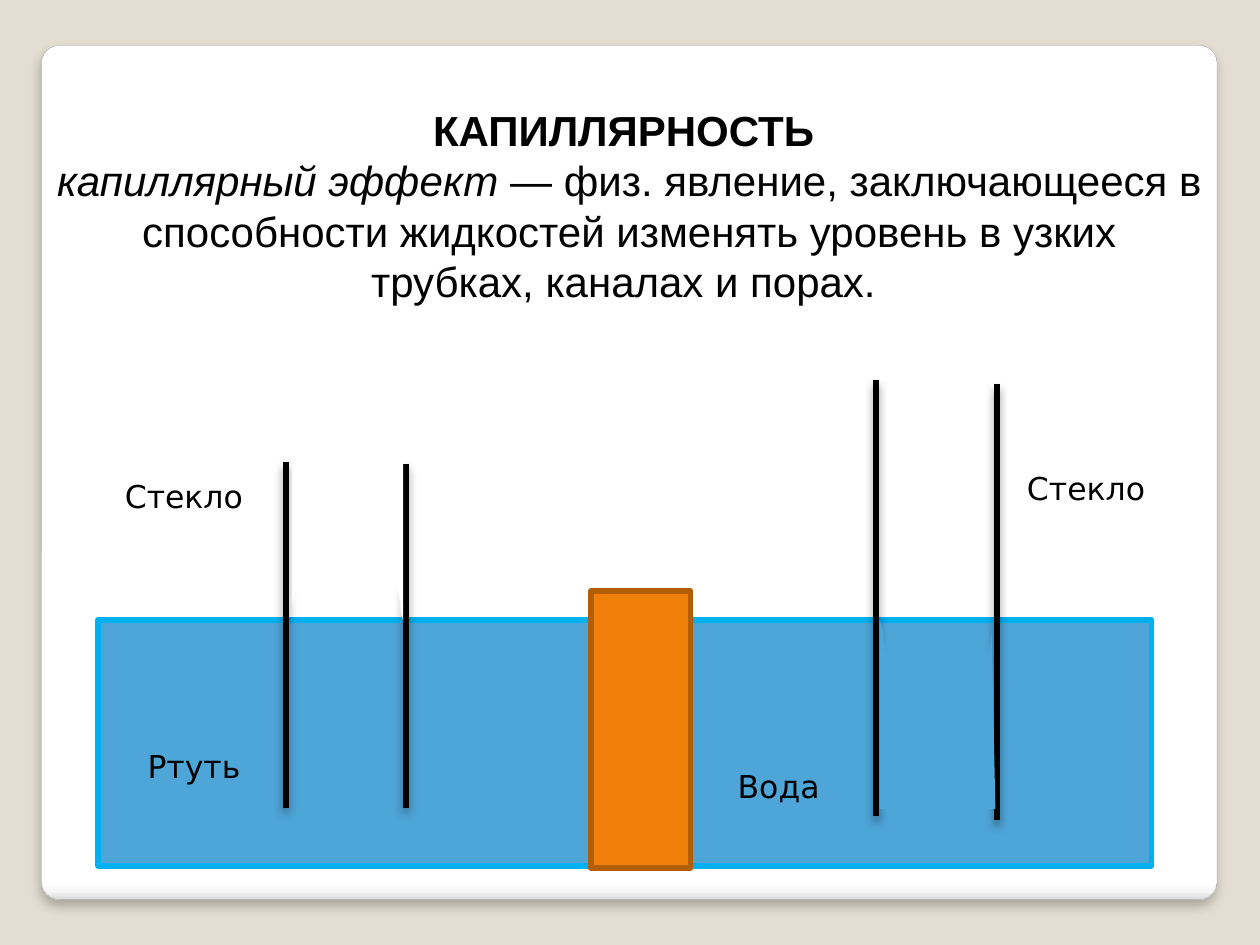
from math import cos, pi, sin

from pptx import Presentation
from pptx.dml.color import RGBColor
from pptx.enum.shapes import MSO_CONNECTOR, MSO_SHAPE
from pptx.enum.text import MSO_ANCHOR, MSO_AUTO_SIZE, PP_ALIGN
from pptx.oxml import parse_xml
from pptx.oxml.ns import nsdecls, qn
from pptx.util import Inches, Pt

BEIGE = RGBColor(0xE3, 0xDE, 0xD1)
WHITE = RGBColor(0xFF, 0xFF, 0xFF)
BLACK = RGBColor(0, 0, 0)
GREY = RGBColor(0xA4, 0xA4, 0xA4)
LIQUID = RGBColor(0x4E, 0xA5, 0xD8)
LIQUID_EDGE = RGBColor(0x00, 0xB0, 0xF0)
ORANGE = RGBColor(0xF0, 0x7F, 0x09)
BROWN = RGBColor(0xB2, 0x5E, 0x07)
PANEL_STOPS = [(0, WHITE), (98, WHITE), (99, RGBColor(0xF7, 0xF7, 0xF7)),
               (100, RGBColor(0xDA, 0xDA, 0xDA))]
EDGE = 3.35


def add_shadow(sp, alpha, blur, dist):
    """Give a shape a soft black shadow that falls downwards."""
    sp._element.spPr.append(parse_xml(
        f'<a:effectLst {nsdecls("a")}><a:outerShdw blurRad="{Pt(blur)}" '
        f'dist="{Pt(dist)}" dir="5400000" algn="t" rotWithShape="0">'
        f'<a:srgbClr val="000000"><a:alpha val="{alpha * 1000}"/></a:srgbClr>'
        '</a:outerShdw></a:effectLst>'))


def style(sp, fill, line=None, width=EDGE):
    """Set a plain fill and an optional outline, without a shadow."""
    sp.shadow.inherit = False
    sp.fill.solid()
    sp.fill.fore_color.rgb = fill
    if line is None:
        sp.line.fill.background()
    else:
        sp.line.color.rgb = line
        sp.line.width = Pt(width)


def add_box(slide, box, fill, line, kind=MSO_SHAPE.RECTANGLE, width=EDGE):
    """Add a preset shape."""
    sp = slide.shapes.add_shape(kind, *map(Inches, box))
    style(sp, fill, line, width)
    return sp


def add_panel(slide):
    """Add the rounded white panel with its shaded lower edge."""
    sp = add_box(slide, (0.33, 0.36, 9.33, 6.78), WHITE, GREY,
                 MSO_SHAPE.ROUNDED_RECTANGLE, 0.16)
    sp.adjustments[0] = 0.021
    sp.fill.gradient()
    sp.fill.gradient_angle = 270
    stops = sp._element.spPr.find('.//' + qn('a:gsLst'))
    stops.clear()
    for pos, color in PANEL_STOPS:
        stops.append(parse_xml(
            f'<a:gs {nsdecls("a")} pos="{pos * 1000}">'
            f'<a:srgbClr val="{color}"/></a:gs>'))
    effects = sp._element.spPr.find(qn('a:effectLst'))
    sp._element.spPr.remove(effects)
    add_shadow(sp, 25, 6, 4)


def add_tube_wall(slide, x, top, bottom):
    """Add one vertical glass wall."""
    ln = slide.shapes.add_connector(MSO_CONNECTOR.STRAIGHT, Inches(x),
                                    Inches(top), Inches(x), Inches(bottom))
    ln.line.color.rgb = BLACK
    ln.line.width = Pt(EDGE)
    add_shadow(ln, 40, 5.2, 3)


def add_meniscus(slide, center, radii, corners, fill):
    """Add a column ended by a half ellipse; a negative height arches up."""
    (cx, cy), (rx, ry) = center, radii
    steps = 24
    arc = [(cx - rx * cos(pi * i / steps), cy + ry * sin(pi * i / steps))
           for i in range(steps + 1)]
    start, *rest = [(Inches(x), Inches(y)) for x, y in arc + corners]
    builder = slide.shapes.build_freeform(*start)
    builder.add_line_segments(rest, close=True)
    style(builder.convert_to_shape(), fill)


def add_run(p, text, size=18, font='DejaVu Sans', bold=False, italic=False):
    """Add centred black text with its format to a paragraph."""
    p.alignment = PP_ALIGN.CENTER
    r = p.add_run()
    r.text = text
    r.font.size = Pt(size)
    r.font.name = font
    r.font.bold = bold
    r.font.italic = italic
    r.font.color.rgb = BLACK


def add_label(slide, x, y, text):
    """Add a caption for a material."""
    tf = slide.shapes.add_textbox(*map(Inches, (x, y, 1.26, 0.4))).text_frame
    tf.word_wrap = True
    add_run(tf.paragraphs[0], text)


def fill_title(slide):
    """Place the heading and definition in the title, above the panel."""
    sp = slide.shapes.title
    sp.left, sp.top, sp.width, sp.height = map(Inches, (0.35, 0.78, 9.29, 1.72))
    sp._element.getparent().append(sp._element)
    tf = sp.text_frame
    tf.word_wrap = True
    tf.auto_size = MSO_AUTO_SIZE.NONE
    tf.vertical_anchor = MSO_ANCHOR.TOP
    body = {'size': 24, 'font': 'Arial'}
    add_run(tf.paragraphs[0], 'КАПИЛЛЯРНОСТЬ\u00a0', bold=True, **body)
    p = tf.add_paragraph()
    add_run(p, 'капиллярный эффект', italic=True, **body)
    add_run(p, '\u00a0— физ. явление, заключающееся в способности\u00a0'
               'жидкостей\u00a0изменять уровень в узких трубках, каналах '
               'и порах.\u00a0', **body)


def main():
    """Build the capillarity slide."""
    prs = Presentation()
    prs.slide_width, prs.slide_height = Inches(10), Inches(7.5)
    slide = prs.slides.add_slide(prs.slide_layouts[5])
    slide.background.fill.solid()
    slide.background.fill.fore_color.rgb = BEIGE

    add_panel(slide)
    add_box(slide, (0.78, 4.92, 8.36, 1.95), LIQUID, LIQUID_EDGE)
    for wall in [(2.27, 3.67, 6.41), (3.22, 3.68, 6.41),
                 (6.95, 3.02, 6.48), (7.91, 3.05, 6.51)]:
        add_tube_wall(slide, *wall)
    add_box(slide, (4.69, 4.69, 0.79, 2.2), ORANGE, BROWN)
    for label in [(0.91, 5.88, 'Ртуть'), (5.55, 6.04, 'Вода'),
                  (0.83, 3.74, 'Стекло'), (7.99, 3.67, 'Стекло')]:
        add_label(slide, *label)
    fill_title(slide)
    add_meniscus(slide, (7.44, 5.01), (0.43, 0.52),
                 [(7.9, 6.42), (6.98, 6.42), (6.98, 4.92)], LIQUID)
    add_meniscus(slide, (2.75, 4.85), (0.43, -0.48),
                 [(3.2, 4.93), (3.2, 3.55), (2.32, 3.59)], WHITE)
    prs.save('out.pptx')


main()
